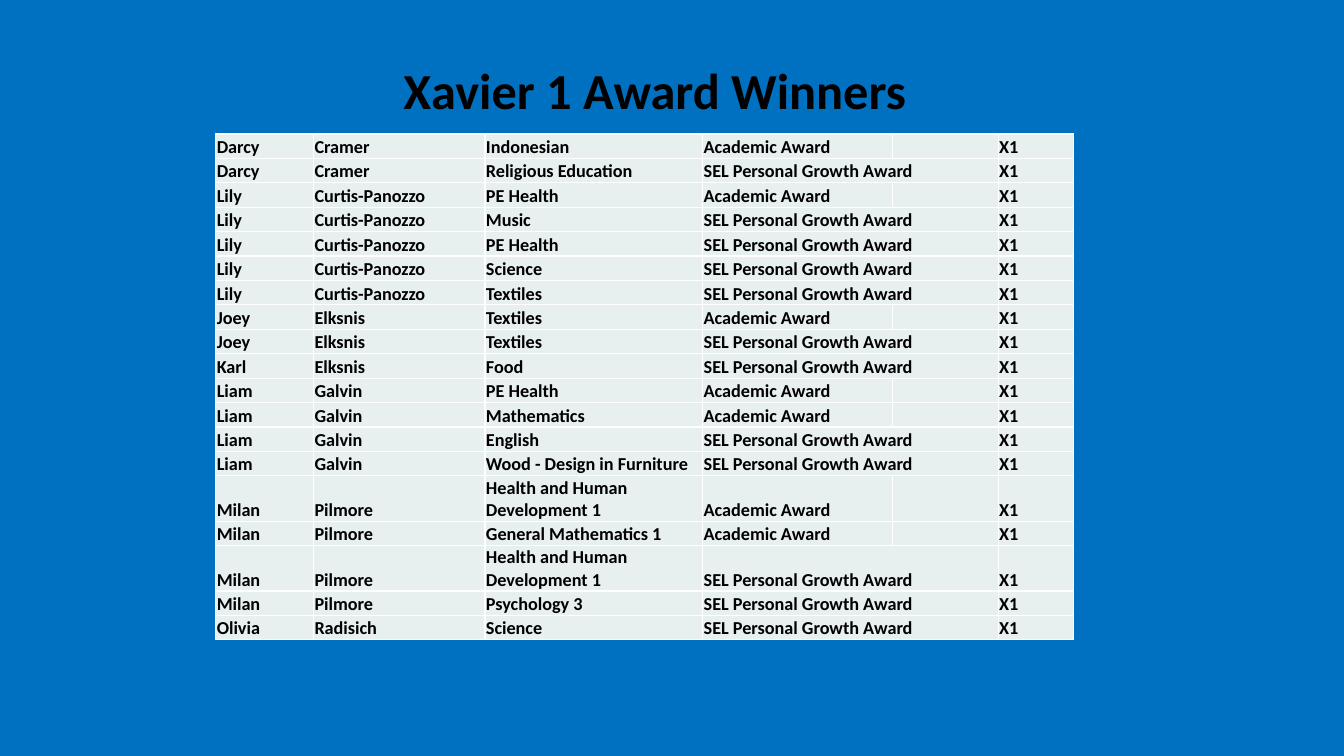
from typing import NamedTuple

from lxml.etree import SubElement
from pptx import Presentation
from pptx.dml.color import RGBColor
from pptx.enum.text import MSO_ANCHOR, MSO_AUTO_SIZE, PP_ALIGN
from pptx.oxml.ns import qn
from pptx.slide import Slide
from pptx.table import _Cell
from pptx.text.text import TextFrame
from pptx.util import Inches, Pt

BLUE = RGBColor(0x00, 0x70, 0xC0)
PALE = RGBColor(0xE8, 0xEF, 0xEF)
BLACK = RGBColor(0x00, 0x00, 0x00)
WHITE = RGBColor(0xFF, 0xFF, 0xFF)
FONT = "Calibri"

ACADEMIC = "Academic Award"
GROWTH = "SEL Personal Growth Award"
HEALTH = "Health and Human Development 1"
GROUP = "X1"

COLUMN_WIDTHS = (0.97, 1.7, 2.16, 1.88, 1.05, 0.75)
TABLE_HEIGHT = 5.02
TALL_ROW = 0.45
AWARD_COLUMN = 3


class Winner(NamedTuple):
    first: str
    last: str
    subject: str
    award: str


WINNERS = [
    Winner("Darcy", "Cramer", "Indonesian", ACADEMIC),
    Winner("Darcy", "Cramer", "Religious Education", GROWTH),
    Winner("Lily", "Curtis-Panozzo", "PE Health", ACADEMIC),
    Winner("Lily", "Curtis-Panozzo", "Music", GROWTH),
    Winner("Lily", "Curtis-Panozzo", "PE Health", GROWTH),
    Winner("Lily", "Curtis-Panozzo", "Science", GROWTH),
    Winner("Lily", "Curtis-Panozzo", "Textiles", GROWTH),
    Winner("Joey", "Elksnis", "Textiles", ACADEMIC),
    Winner("Joey", "Elksnis", "Textiles", GROWTH),
    Winner("Karl", "Elksnis", "Food", GROWTH),
    Winner("Liam", "Galvin", "PE Health", ACADEMIC),
    Winner("Liam", "Galvin", "Mathematics", ACADEMIC),
    Winner("Liam", "Galvin", "English", GROWTH),
    Winner("Liam", "Galvin", "Wood - Design in Furniture", GROWTH),
    Winner("Milan", "Pilmore", HEALTH, ACADEMIC),
    Winner("Milan", "Pilmore", "General Mathematics 1", ACADEMIC),
    Winner("Milan", "Pilmore", HEALTH, GROWTH),
    Winner("Milan", "Pilmore", "Psychology 3", GROWTH),
    Winner("Olivia", "Radisich", "Science", GROWTH),
]


def write_text(tf: TextFrame, text: str, *, size: float,
               align: PP_ALIGN = PP_ALIGN.LEFT, spacing: float = 1.0) -> None:
    p = tf.paragraphs[0]
    p.alignment = align
    p.line_spacing = spacing
    if not text:
        SubElement(p._p, qn("a:endParaRPr"), sz=str(int(size * 100)))
        return
    r = p.add_run()
    r.text = text
    r.font.name = FONT
    r.font.size = Pt(size)
    r.font.bold = True
    r.font.color.rgb = BLACK


def add_borders(cell: _Cell, color: RGBColor, width: float) -> None:
    tc_pr = cell._tc.get_or_add_tcPr()
    for side in ("a:lnL", "a:lnR", "a:lnT", "a:lnB"):
        ln = SubElement(tc_pr, qn(side), w=str(Pt(width)))
        fill = SubElement(ln, qn("a:solidFill"))
        SubElement(fill, qn("a:srgbClr"), val=str(color))


def format_cell(cell: _Cell, text: str) -> None:
    add_borders(cell, WHITE, 1)
    cell.fill.solid()
    cell.fill.fore_color.rgb = PALE
    cell.vertical_anchor = MSO_ANCHOR.BOTTOM
    cell.margin_left = cell.margin_right = cell.margin_top = Inches(0.01)
    cell.margin_bottom = 0
    write_text(cell.text_frame, text, size=13)


def add_title(s: Slide, text: str) -> None:
    sp = s.shapes.title
    sp.left, sp.top = Inches(0.67), Inches(0.6)
    sp.width, sp.height = Inches(11.65), Inches(1.24)
    tf = sp.text_frame
    tf.auto_size = MSO_AUTO_SIZE.NONE
    tf.vertical_anchor = MSO_ANCHOR.TOP
    write_text(tf, text, size=36, align=PP_ALIGN.CENTER, spacing=0.9)


def add_winners(s: Slide, winners: list[Winner]) -> None:
    table = s.shapes.add_table(
        len(winners), len(COLUMN_WIDTHS), Inches(2.14), Inches(1.33),
        Inches(sum(COLUMN_WIDTHS)), Inches(TABLE_HEIGHT)).table
    table.first_row = table.horz_banding = False
    for column, width in zip(table.columns, COLUMN_WIDTHS):
        column.width = Inches(width)
    tall = sum(w.subject == HEALTH for w in winners)
    short_row = (TABLE_HEIGHT - tall * TALL_ROW) / (len(winners) - tall)
    for i, winner in enumerate(winners):
        table.rows[i].height = Inches(
            TALL_ROW if winner.subject == HEALTH else short_row)
        for j, text in enumerate((*winner, "", GROUP)):
            format_cell(table.cell(i, j), text)
        if winner.award == GROWTH:
            table.cell(i, AWARD_COLUMN).merge(table.cell(i, AWARD_COLUMN + 1))


def main() -> None:
    prs = Presentation()
    prs.slide_width, prs.slide_height = Inches(13.33), Inches(7.5)
    s = prs.slides.add_slide(prs.slide_layouts[5])
    s.background.fill.solid()
    s.background.fill.fore_color.rgb = BLUE
    add_title(s, "Xavier 1 Award Winners")
    add_winners(s, WINNERS)
    prs.save("out.pptx")


if __name__ == "__main__":
    main()
